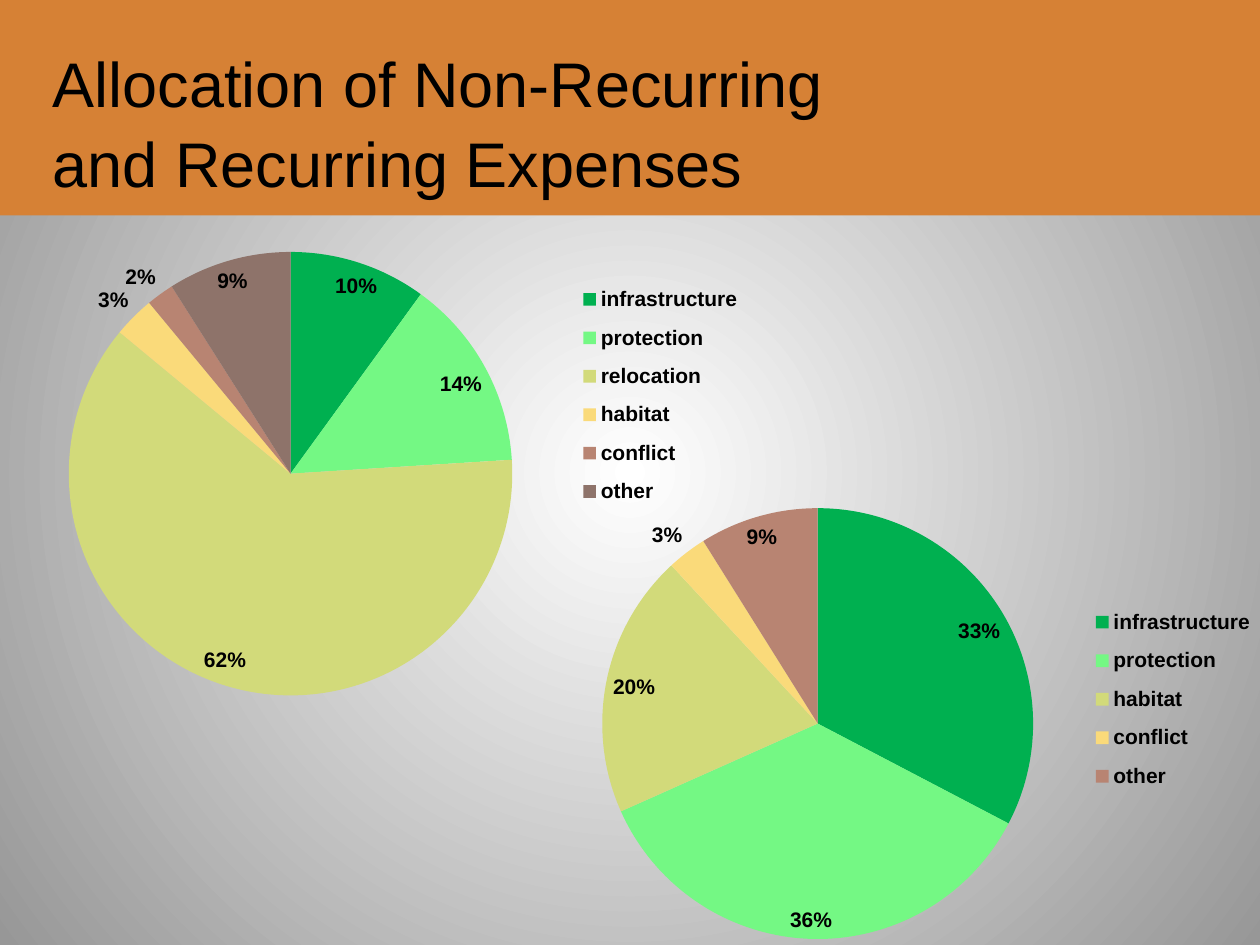
from lxml.etree import SubElement
from pptx import Presentation
from pptx.chart.data import CategoryChartData
from pptx.dml.color import RGBColor
from pptx.enum.chart import XL_CHART_TYPE, XL_LABEL_POSITION, XL_LEGEND_POSITION
from pptx.enum.shapes import MSO_SHAPE
from pptx.enum.text import MSO_ANCHOR
from pptx.oxml import parse_xml
from pptx.oxml.ns import nsdecls, qn
from pptx.util import Inches, Pt

PALETTE = ["00B050", "74F884", "D2DA7A", "FADA7A", "B88472", "8E736A"]


def colour(value):
    return RGBColor.from_string(value)


def set_layout(parent, frame, inner=False):
    """Place a plot area or legend at x, y, w, h, as fractions of the chart."""
    old = parent.find(qn("c:layout"))
    if old is not None:
        parent.remove(old)
    layout = parse_xml(f"<c:layout {nsdecls('c')}/>")
    manual = SubElement(layout, qn("c:manualLayout"))
    settings = [("layoutTarget", "inner")] if inner else []
    settings += [("xMode", "edge"), ("yMode", "edge"), *zip("xywh", frame)]
    for tag, value in settings:
        SubElement(manual, qn(f"c:{tag}")).set("val", str(value))
    if inner:
        parent.insert(0, layout)
    else:
        parent.find(qn("c:legendPos")).addnext(layout)


class SlideBuilder:
    font = "Arial"
    ink = "000000"

    def __init__(self, slide):
        self.slide = slide

    def style(self, font, size, bold=False):
        font.name, font.size, font.bold = self.font, Pt(size), bold
        font.color.rgb = colour(self.ink)

    def background(self, centre, edge):
        """Fill the slide with a circular gradient."""
        bg = parse_xml(
            f'<p:bg {nsdecls("p", "a")}><p:bgPr><a:gradFill rotWithShape="1"><a:gsLst>'
            f'<a:gs pos="0"><a:srgbClr val="{centre}"/></a:gs>'
            f'<a:gs pos="100000"><a:srgbClr val="{edge}"/></a:gs></a:gsLst>'
            '<a:path path="circle">'
            '<a:fillToRect l="50000" t="50000" r="50000" b="50000"/></a:path>'
            '</a:gradFill><a:effectLst/></p:bgPr></p:bg>')
        self.slide.element.find(qn("p:cSld")).insert(0, bg)

    def band(self, box, fill):
        band = self.slide.shapes.add_shape(MSO_SHAPE.RECTANGLE, *map(Inches, box))
        band.shadow.inherit = False
        band.fill.solid()
        band.fill.fore_color.rgb = colour(fill)
        band.line.fill.background()

    def title(self, box, text):
        frame = self.slide.shapes.add_textbox(*map(Inches, box)).text_frame
        frame.word_wrap = True
        frame.vertical_anchor = MSO_ANCHOR.MIDDLE
        paragraph = frame.paragraphs[0]
        paragraph.line_spacing = 1.05
        run = paragraph.add_run()
        run.text = text
        self.style(run.font, 36)

    def pie(self, box, shares, plot_frame, legend_frame):
        data = CategoryChartData()
        data.categories = list(shares)
        data.add_series("Series 1", list(shares.values()))
        chart = self.slide.shapes.add_chart(
            XL_CHART_TYPE.PIE, *map(Inches, box), data).chart
        chart.has_title = False
        self.style(chart.font, 10)

        chart.has_legend = True
        legend = chart.legend
        legend.position = XL_LEGEND_POSITION.RIGHT
        legend.include_in_layout = False
        self.style(legend.font, 12, bold=True)

        plot = chart.plots[0]
        plot.vary_by_categories = True
        for index, fill in enumerate(PALETTE[:len(shares)]):
            wedge = plot.series[0].points[index].format
            wedge.fill.solid()
            wedge.fill.fore_color.rgb = colour(fill)
            wedge.line.fill.background()

        labels = plot.series[0].data_labels
        labels.show_value = False
        labels.show_percentage = True
        labels.number_format = "0%"
        labels.number_format_is_linked = False
        labels.position = XL_LABEL_POSITION.BEST_FIT
        self.style(labels.font, 12, bold=True)

        set_layout(chart.element.find(f".//{qn('c:plotArea')}"), plot_frame, inner=True)
        set_layout(chart.element.find(f".//{qn('c:legend')}"), legend_frame)


def main():
    deck = Presentation()
    deck.slide_width, deck.slide_height = Inches(10), Inches(7.5)
    page = SlideBuilder(deck.slides.add_slide(deck.slide_layouts[6]))

    page.background("FFFFFF", "979797")
    page.band((0, 0, 10, 1.71), "D68135")
    page.title((0.32, 0.27, 7.18, 1.37),
               "Allocation of Non-Recurring and Recurring Expenses")

    non_recurring = {"infrastructure": 10, "protection": 14, "relocation": 62,
                     "habitat": 3, "conflict": 2, "other": 9}
    recurring = {"infrastructure": 33, "protection": 36, "habitat": 20,
                 "conflict": 3, "other": 9}
    page.pie((0, 1.68, 5.99, 4), non_recurring,
             (0.09, 0.08, 0.59, 0.88), (0.76, 0.12, 0.23, 0.49))
    page.pie((4, 3.64, 6, 3.86), recurring,
             (0.13, 0.1, 0.57, 0.89), (0.77, 0.28, 0.23, 0.43))
    deck.save("out.pptx")


if __name__ == "__main__":
    main()
